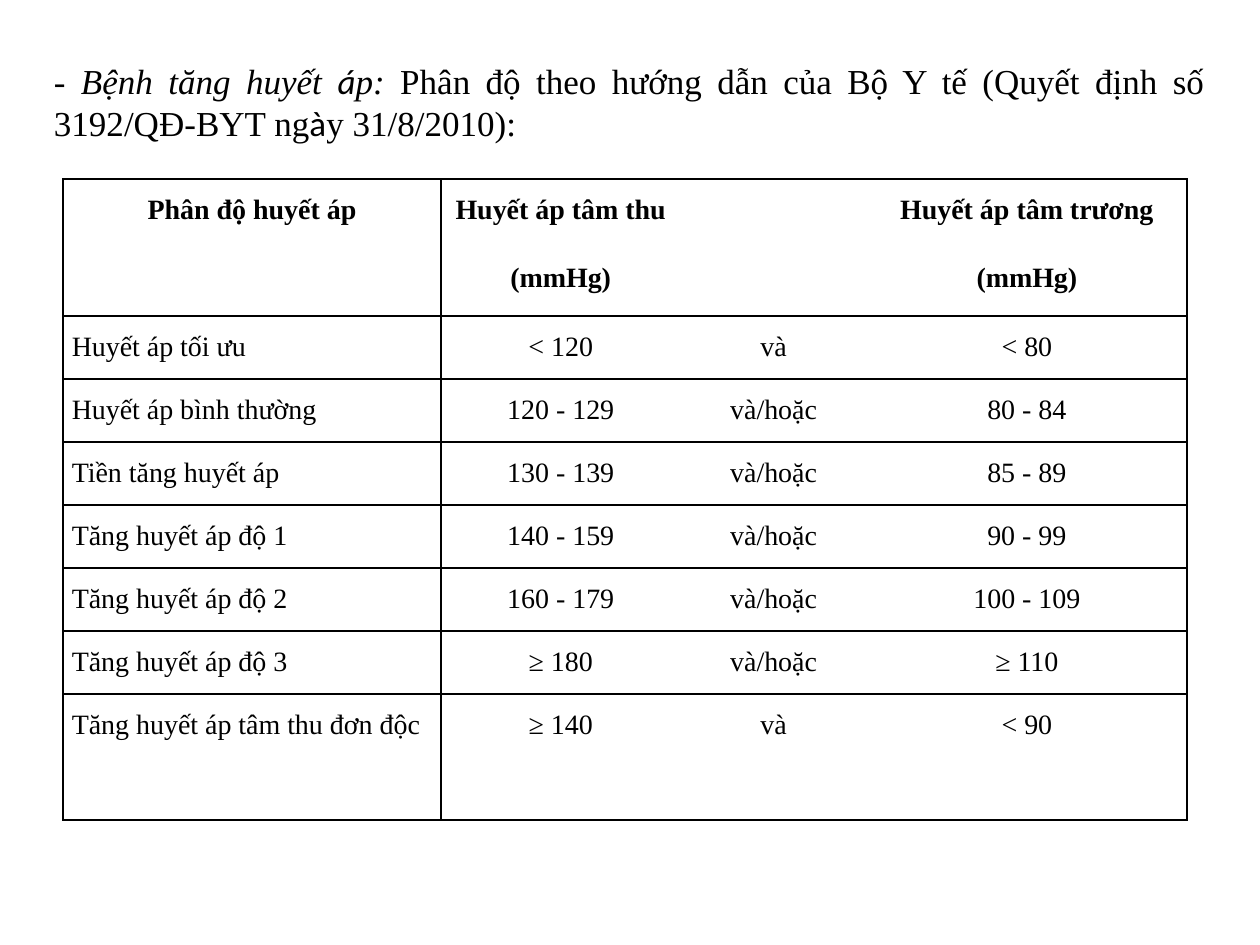
"""Build a slide with the blood pressure classification table."""
from lxml import etree
from pptx import Presentation
from pptx.dml.color import RGBColor
from pptx.enum import text
from pptx.oxml.ns import qn
from pptx.util import Inches, Pt

COLORS = {"ink": "000000"}
SERIF, SANS = "Times New Roman", "Calibri"
INTRO = [
    ("- Bệnh tăng huyết ", SERIF, True),
    ("á", SANS, True),
    ("p:", SERIF, True),
    (" Phân độ theo hướng dẫn của Bộ Y tế (Quyết định số 3192/QĐ-BYT ng", SERIF, False),
    ("à", SANS, False),
    ("y 31/8/2010):", SERIF, False),
]
ROWS = [
    ("Phân độ huyết áp", "Huyết áp tâm thu\n(mmHg)", "", "Huyết áp tâm trương\n(mmHg)"),
    ("Huyết áp tối ưu", "< 120", "và", "< 80"),
    ("Huyết áp bình thường", "120 - 129", "và/hoặc", "80 - 84"),
    ("Tiền tăng huyết áp", "130 - 139", "và/hoặc", "85 - 89"),
    ("Tăng huyết áp độ 1", "140 - 159", "và/hoặc", "90 - 99"),
    ("Tăng huyết áp độ 2", "160 - 179", "và/hoặc", "100 - 109"),
    ("Tăng huyết áp độ 3", "≥ 180", "và/hoặc", "≥ 110"),
    ("Tăng huyết áp tâm thu đơn độc", "≥ 140", "và", "< 90"),
]
COLUMN_WIDTHS = [3, 1.9, 1.48, 2.54]
ROW_HEIGHTS = [1.09] + [0.5] * 6 + [1]
COLUMN_BORDERS = ["LRTB", "LTB", "TB", "RTB"]


def style_font(font, size):
    font.size = Pt(size)
    font.color.rgb = RGBColor.from_string(COLORS["ink"])


def add_intro(slide):
    box = slide.shapes.add_textbox(Inches(0.33), Inches(0.42), Inches(9.33), Inches(0.77))
    frame = box.text_frame
    frame.word_wrap = True
    frame.vertical_anchor = text.MSO_ANCHOR.MIDDLE
    paragraph = frame.paragraphs[0]
    paragraph.alignment = text.PP_ALIGN.JUSTIFY
    for words, name, italic in INTRO:
        run = paragraph.add_run()
        run.text = words
        style_font(run.font, 20)
        run.font.name = name
        run.font.italic = italic


def set_borders(cell, sides):
    properties = cell._tc.get_or_add_tcPr()
    for side in "LRTB":
        line = etree.SubElement(properties, qn(f"a:ln{side}"), w=str(Pt(1)))
        if side in sides:
            fill = etree.SubElement(line, qn("a:solidFill"))
            etree.SubElement(fill, qn("a:srgbClr"), val=COLORS["ink"])
        else:
            etree.SubElement(line, qn("a:noFill"))


def fill_cell(cell, words, is_header, is_label):
    cell.text = words
    cell.margin_left = cell.margin_right = Inches(0.07)
    cell.margin_top = cell.margin_bottom = 0
    for paragraph in cell.text_frame.paragraphs:
        justified = is_label and not is_header
        paragraph.alignment = text.PP_ALIGN.JUSTIFY if justified else text.PP_ALIGN.CENTER
        paragraph.line_spacing = 1.5
        paragraph.space_before = paragraph.space_after = Pt(6)
        style_font(paragraph.font, 16)
        paragraph.font.name = SERIF
        paragraph.font.bold = is_header


def add_pressure_table(slide):
    table = slide.shapes.add_table(
        len(ROWS), len(COLUMN_WIDTHS), Inches(0.5), Inches(1.42),
        Inches(sum(COLUMN_WIDTHS)), Inches(sum(ROW_HEIGHTS)),
    ).table
    table.first_row = table.horz_banding = False
    for column, width in zip(table.columns, COLUMN_WIDTHS):
        column.width = Inches(width)
    for row, height in zip(table.rows, ROW_HEIGHTS):
        row.height = Inches(height)
    for i, values in enumerate(ROWS):
        for j, words in enumerate(values):
            cell = table.cell(i, j)
            fill_cell(cell, words, i == 0, j == 0)
            set_borders(cell, COLUMN_BORDERS[j])
            cell.fill.background()


def main():
    presentation = Presentation()
    presentation.slide_width, presentation.slide_height = Inches(10), Inches(7.5)
    slide = presentation.slides.add_slide(presentation.slide_layouts[6])
    add_intro(slide)
    add_pressure_table(slide)
    presentation.save("out.pptx")


if __name__ == "__main__":
    main()
